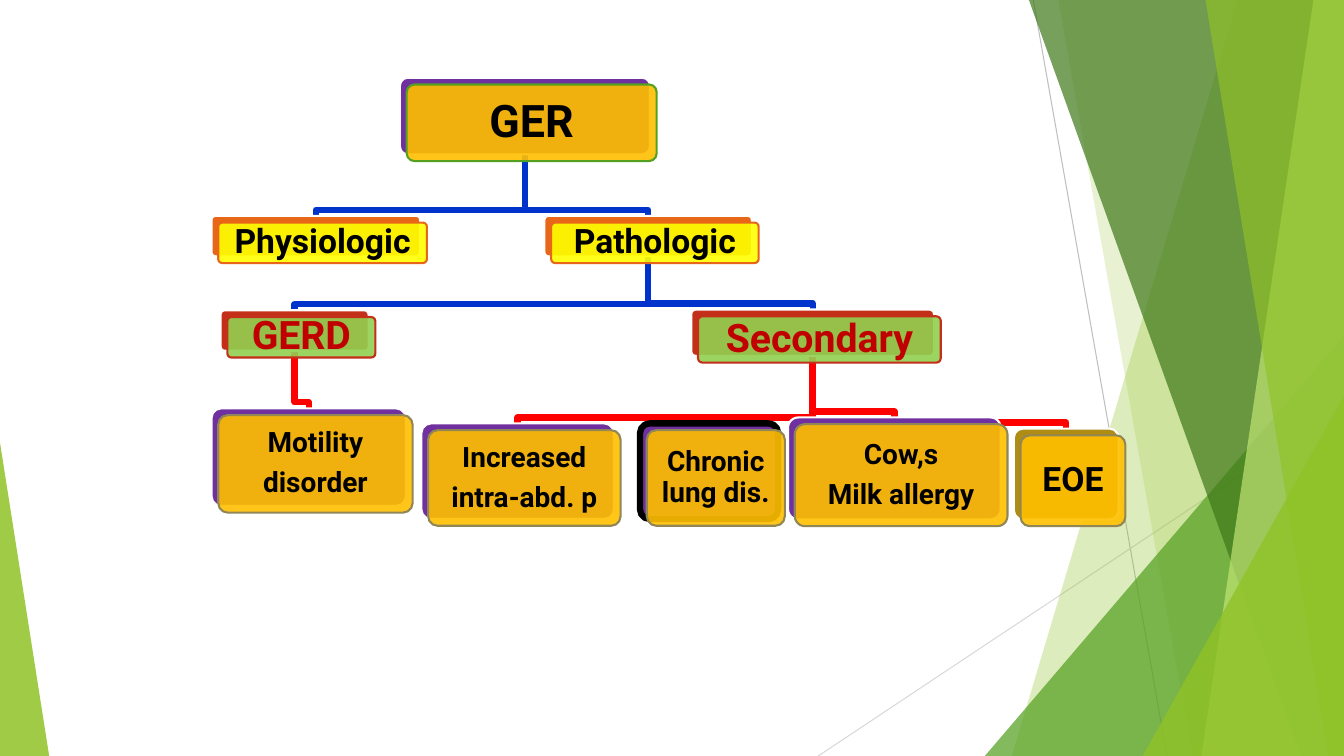
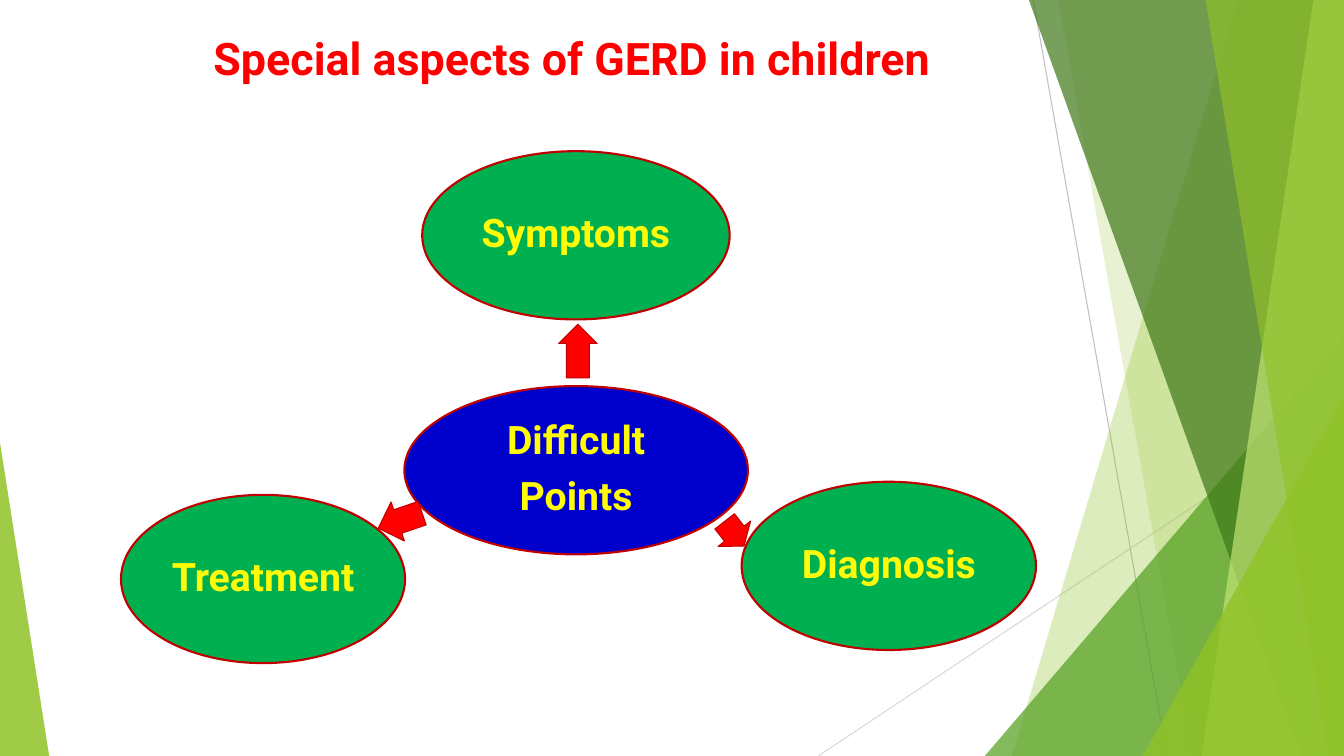
from typing import NamedTuple

from lxml import etree
from pptx import Presentation
from pptx.dml.color import RGBColor
from pptx.enum import shapes, text
from pptx.oxml import ns
from pptx.util import Cm, Pt

FONT = "Roboto"
WIDE, HIGH = 33.87, 19.05
SHIFT = 0.17
BEND = 0.15

WHITE = RGBColor(0xFF, 0xFF, 0xFF)
BLACK = RGBColor(0x00, 0x00, 0x00)
GREY = RGBColor(0xBF, 0xBF, 0xBF)
SILVER = RGBColor(0xD9, 0xD9, 0xD9)
LIME = RGBColor(0x90, 0xC2, 0x26)
GREEN = RGBColor(0x54, 0xA0, 0x21)
MOSS = RGBColor(0x3F, 0x78, 0x19)
PALE = RGBColor(0xC0, 0xE4, 0x74)
RED = RGBColor(0xFF, 0x00, 0x00)
DARK = RGBColor(0xC0, 0x00, 0x00)
RUST = RGBColor(0xC4, 0x2F, 0x1A)
ORANGE = RGBColor(0xE7, 0x66, 0x18)
PURPLE = RGBColor(0x70, 0x30, 0xA0)
AMBER = RGBColor(0xFF, 0xC0, 0x00)
YELLOW = RGBColor(0xFF, 0xFF, 0x00)
LEMON = RGBColor(0xFF, 0xFA, 0x06)
LEAF = RGBColor(0x92, 0xD0, 0x50)
KHAKI = RGBColor(0x91, 0x86, 0x55)
GOLD = RGBColor(0xAF, 0x8C, 0x14)
BLUE = RGBColor(0x00, 0x33, 0xCC)
NAVY = RGBColor(0x00, 0x00, 0xCC)
JADE = RGBColor(0x00, 0xB0, 0x50)


class Style(NamedTuple):
    back: RGBColor
    front: RGBColor
    edge: RGBColor
    size: int
    ink: RGBColor = BLACK
    rim: RGBColor = WHITE
    thick: float = 1.5


class Node(NamedTuple):
    x: float
    y: float
    w: float
    h: float
    style: Style
    lines: list


ROOT = Style(PURPLE, AMBER, GREEN, 32)
KIND = Style(ORANGE, YELLOW, ORANGE, 24)
GROUP = Style(RUST, LEAF, RUST, 28, DARK)
CAUSE = Style(PURPLE, AMBER, KHAKI, 20)
LUNG = CAUSE._replace(rim=BLACK, thick=4.5)
LAST = Style(GOLD, AMBER, KHAKI, 24)

NODES = {
    "ger": Node(10.08, 1.96, 6.3, 1.93, ROOT, ["GER"]),
    "phys": Node(5.33, 5.44, 5.26, 1.02, KIND, ["Physiologic"]),
    "path": Node(13.72, 5.44, 5.23, 1.02, KIND, ["Pathologic"]),
    "gerd": Node(5.56, 7.82, 3.73, 1.02, GROUP, ["GERD"]),
    "motile": Node(5.33, 10.29, 4.9, 2.46, CAUSE, ["Motility", "disorder"]),
    "second": Node(17.42, 7.8, 6.12, 1.17, GROUP, ["Secondary"]),
    "press": Node(10.62, 10.67, 4.85, 2.41, CAUSE, ["Increased", "intra-abd. p"]),
    "lung": Node(16.13, 10.67, 3.48, 2.41, LUNG, ["Chronic lung dis."]),
    "milk": Node(19.86, 10.52, 5.36, 2.57, CAUSE, ["Cow,s", "Milk allergy"]),
    "eoe": Node(25.55, 10.8, 2.64, 2.29, LAST, ["EOE"]),
}

LINKS = [
    ("second", ["eoe", "milk", "lung", "press"], RED),
    ("path", ["second"], BLUE),
    ("gerd", ["motile"], RED),
    ("path", ["gerd"], BLUE),
    ("ger", ["path", "phys"], BLUE),
]


def paint(shape, fill=None, alpha=100, line=None, width=1.5):
    shape.shadow.inherit = False
    if fill is None:
        shape.fill.background()
    else:
        shape.fill.solid()
        shape.fill.fore_color.rgb = fill
        if alpha < 100:
            tint = shape.element.xpath(".//a:solidFill/a:srgbClr")[0]
            etree.SubElement(tint, ns.qn("a:alpha"), val=str(alpha * 1000))
    if line is None:
        shape.line.fill.background()
    else:
        shape.line.color.rgb = line
        shape.line.width = Pt(width)


def preset(slide, kind, x, y, w, h, *adjust):
    shape = slide.shapes.add_shape(kind, Cm(x), Cm(y), Cm(w), Cm(h))
    for at, value in enumerate(adjust):
        shape.adjustments[at] = value
    return shape


def outline(slide, points, close):
    spots = [(Cm(x), Cm(y)) for x, y in points]
    pen = slide.shapes.build_freeform(*spots[0])
    pen.add_line_segments(spots[1:], close=close)
    return pen.convert_to_shape()


def label(shape, lines, size, ink, inset):
    frame = shape.text_frame
    frame.word_wrap = True
    frame.vertical_anchor = text.MSO_ANCHOR.MIDDLE
    frame.margin_left = frame.margin_right = Cm(inset)
    frame.margin_top = frame.margin_bottom = Cm(inset)
    frame.text = "\n".join(lines)
    for para in frame.paragraphs:
        para.alignment = text.PP_ALIGN.CENTER
        para.line_spacing = 0.9
        para.space_after = Pt(0.35 * size)
        style(para, size, ink)


def style(para, size, ink):
    font = para.font
    font.name, font.size, font.bold = FONT, Pt(size), True
    font.color.rgb = ink


def rule(slide, start, end, color):
    line = slide.shapes.add_connector(
        shapes.MSO_CONNECTOR.STRAIGHT, *(Cm(v) for v in start + end))
    line.line.color.rgb = color
    line.line.width = Pt(0.75)
    etree.SubElement(line.element.spPr, ns.qn("a:effectLst"))


def panel(slide, top, base, color, alpha):
    points = [(top, 0), (WIDE, 0), (WIDE, HIGH), (base, HIGH)]
    paint(outline(slide, points, True), color, alpha)


def wedge(slide, x, y, w, tip, color, alpha):
    kind = shapes.MSO_SHAPE.ISOSCELES_TRIANGLE
    paint(preset(slide, kind, x, y, w, HIGH - y, tip), color, alpha)


def backdrop(slide, layout):
    rule(slide, (26.04, 0), (29.41, HIGH), GREY)
    rule(slide, (WIDE, 10.24), (20.62, HIGH), SILVER)
    panel(slide, 31.19, 25.5, LIME, 30)
    panel(slide, 26.67, 30.05, LIME, 20)
    wedge(slide, 24.82, 8.46, 9.05, 1, GREEN, 72)
    panel(slide, 25.93, 32.79, MOSS, 70)
    panel(slide, 33.1, 30.28, PALE, 70)
    panel(slide, 30.38, 33.48, LIME, 65)
    wedge(slide, 28.8, 9.98, 5.07, 1, LIME, 80)
    wedge(slide, 0, 11.15, 1.24, 0, LIME, 85)
    for old in list(layout.placeholders):
        old.element.getparent().remove(old.element)
    for shape in list(slide.shapes):
        layout.shapes.element.append(shape.element)


def link(slide, top, low, color):
    start, end = top.x + top.w / 2, low.x + low.w / 2
    turn = low.y - BEND
    points = [(start, top.y + top.h), (start, turn), (end, turn), (end, low.y)]
    paint(outline(slide, points, False), line=color, width=4.5)


def card(slide, node):
    look = node.style
    kind = shapes.MSO_SHAPE.ROUNDED_RECTANGLE
    back = preset(slide, kind, node.x, node.y, node.w, node.h, 0.1)
    paint(back, look.back, line=look.rim, width=look.thick)
    front = preset(slide, kind, node.x + SHIFT, node.y + SHIFT, node.w, node.h, 0.1)
    paint(front, look.front, 90, look.edge)
    label(front, node.lines, look.size, look.ink, look.size * 0.0105)


def oval(slide, x, y, w, color, *lines):
    shape = preset(slide, shapes.MSO_SHAPE.OVAL, x, y, w, 4.24)
    paint(shape, color, line=DARK)
    label(shape, lines, 28, LEMON, 0.1)


def arrow(slide, x, y, w, h, turn):
    shape = preset(slide, shapes.MSO_SHAPE.RIGHT_ARROW, x, y, w, h, 0.6, 0.5)
    shape.rotation = turn
    paint(shape, RED, line=DARK, width=0.75)


def title(slide, words):
    box = slide.shapes.add_textbox(Cm(5.13), Cm(0.64), Cm(22.86), Cm(3.18))
    box.text_frame.word_wrap = True
    box.text_frame.text = words
    style(box.text_frame.paragraphs[0], 32, RED)


def tree(slide):
    for top, lows, color in LINKS:
        for low in lows:
            link(slide, NODES[top], NODES[low], color)
    for node in NODES.values():
        card(slide, node)


def aspects(slide):
    title(slide, "Special aspects of GERD in children")
    oval(slide, 10.19, 9.73, 8.66, NAVY, "Difficult", "Points")
    arrow(slide, 13.89, 8.36, 1.35, 0.97, 270)
    oval(slide, 10.64, 3.81, 7.75, JADE, "Symptoms")
    arrow(slide, 18.11, 12.93, 0.79, 1.04, 52.1)
    oval(slide, 18.69, 12.14, 7.42, JADE, "Diagnosis")
    arrow(slide, 9.5, 12.6, 1.17, 1.04, 161.1)
    oval(slide, 3.05, 12.47, 7.16, JADE, "Treatment")


def main():
    deck = Presentation()
    deck.slide_width, deck.slide_height = Cm(WIDE), Cm(HIGH)
    blank = deck.slide_layouts[6]
    first, second = (deck.slides.add_slide(blank) for _ in range(2))
    backdrop(first, blank)
    tree(first)
    aspects(second)
    deck.save("out.pptx")


if __name__ == "__main__":
    main()
